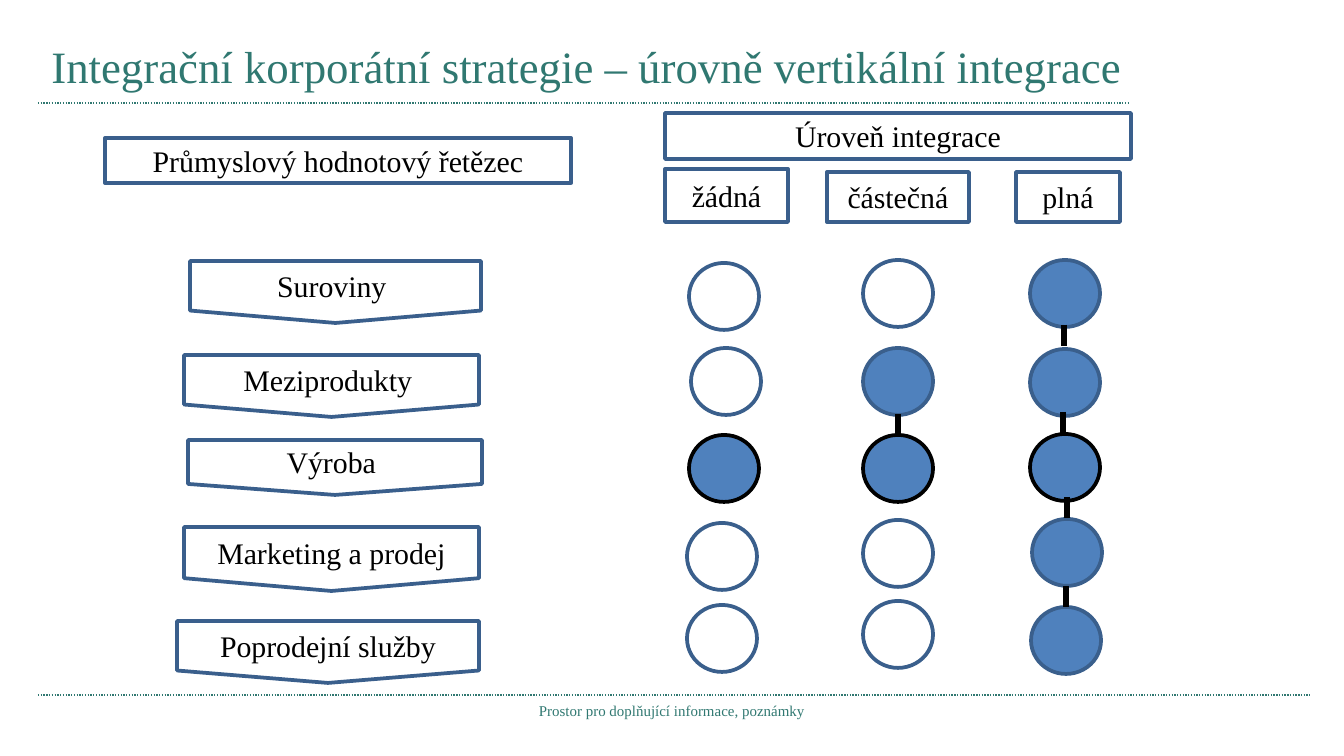
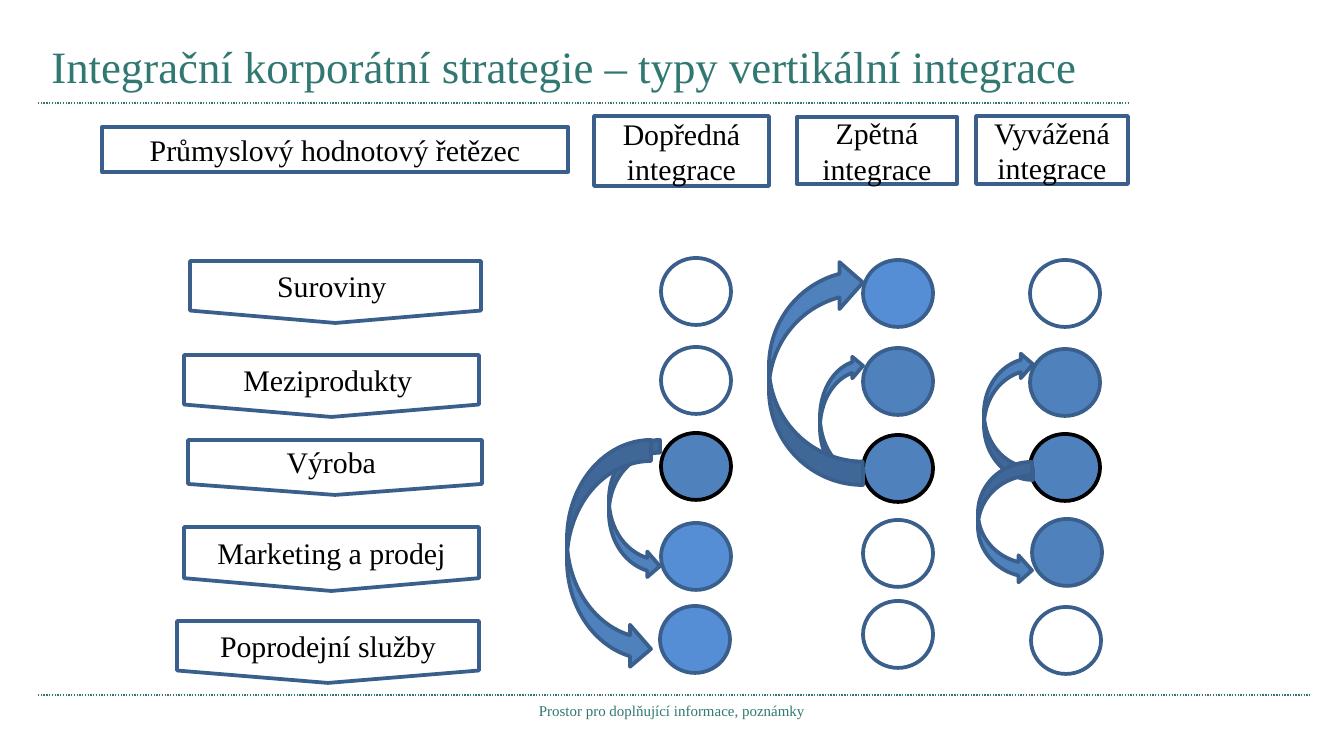
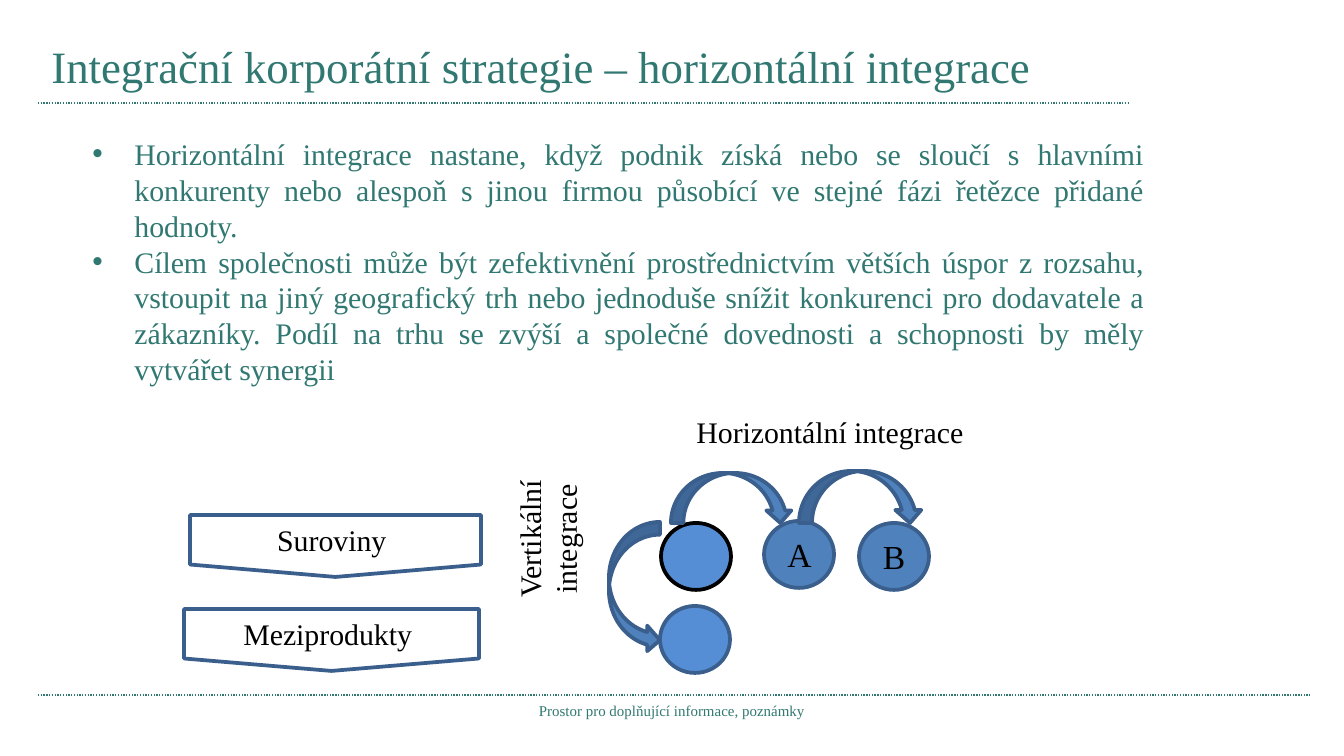
import lxml.etree
import pptx
import pptx.dml.color
import pptx.enum.dml
import pptx.enum.shapes
import pptx.enum.text
import pptx.oxml.ns
import pptx.util

RGBColor = pptx.dml.color.RGBColor
Pt = pptx.util.Pt
SHAPE = pptx.enum.shapes.MSO_SHAPE
ALIGN = pptx.enum.text.PP_ALIGN
ANCHOR = pptx.enum.text.MSO_ANCHOR
FIT = pptx.enum.text.MSO_AUTO_SIZE

TEAL = RGBColor(0x30, 0x78, 0x71)
NAVY = RGBColor(0x3A, 0x5F, 0x8C)
BLUE = RGBColor(0x4F, 0x81, 0xBD)
SKY = RGBColor(0x55, 0x8E, 0xD5)
BLACK = RGBColor(0, 0, 0)
FONT = "Times New Roman"
SCALE = 9144000 / 1344
SLIDE_SIZE = (1344, 756)

TITLE_AREA = (38, 28, 1122, 75)
BODY_AREA = (79, 129, 1079, 267)
FOOTER_AREA = (397, 695, 550, 31)
FOOTER = "Prostor pro doplňující informace, poznámky"
RULES = [(38, 103, 1128, 103), (38, 695, 1310, 695)]

TITLES = [
    "Integrační korporátní strategie – úrovně vertikální integrace",
    "Integrační korporátní strategie – typy vertikální integrace",
    "Integrační korporátní strategie – horizontální integrace",
]
BULLETS = [
    "Horizontální integrace nastane, když podnik získá nebo se sloučí s hlavními konkurenty "
    "nebo alespoň s jinou firmou působící ve stejné fázi řetězce přidané hodnoty. ",
    "Cílem společnosti může být zefektivnění prostřednictvím větších úspor z rozsahu, vstoupit "
    "na jiný geografický trh nebo jednoduše snížit konkurenci pro dodavatele a zákazníky. "
    "Podíl na trhu se zvýší a společné dovednosti a schopnosti by měly vytvářet synergii",
]

STAGES = [
    ("Suroviny ", (190, 261, 291, 62)),
    ("Meziprodukty ", (184, 355, 295, 62)),
    ("Výroba ", (188, 440, 294, 55)),
    ("Marketing a prodej", (184, 527, 295, 64)),
    ("Poprodejní služby", (177, 621, 302, 62)),
]
STAGE_DROP = 254

LEVEL_HEADINGS = [
    ("Průmyslový hodnotový řetězec", (105, 138, 466, 45)),
    ("žádná", (665, 169, 123, 53)),
    ("částečná", (827, 172, 142, 50)),
    ("plná", (1016, 172, 104, 50)),
    ("Úroveň integrace", (665, 113, 466, 46)),
]
TYPE_HEADINGS = [
    ("Průmyslový hodnotový řetězec", (102, 127, 466, 45)),
    ("Dopředná integrace", (594, 116, 175, 70)),
    ("Zpětná integrace", (797, 117, 160, 67)),
    ("Vyvážená integrace", (976, 116, 152, 68)),
]

CIRCLE = (70, 67)
CIRCLE_STYLES = {
    "open": (None, NAVY),
    "joined": (BLUE, NAVY),
    "target": (SKY, NAVY),
    "core": (BLUE, BLACK),
    "start": (SKY, BLACK),
}
NONE_SPOTS = [(689, 263), (691, 348), (689, 435), (687, 523), (687, 605)]
FORWARD_SPOTS = [(661, 258), (661, 347), (661, 433), (661, 523), (660, 606)]
MIDDLE_SPOTS = [(863, 260), (863, 348), (863, 435), (863, 520), (863, 601)]
RIGHT_SPOTS = [(1030, 260), (1030, 349), (1030, 434), (1032, 519), (1031, 607)]

LEVEL_COLUMNS = [
    (NONE_SPOTS, ["open", "open", "core", "open", "open"]),
    (MIDDLE_SPOTS, ["open", "joined", "core", "open", "open"]),
    (RIGHT_SPOTS, ["joined", "joined", "core", "joined", "joined"]),
]
TYPE_COLUMNS = [
    (FORWARD_SPOTS, ["open", "open", "core", "target", "target"]),
    (MIDDLE_SPOTS, ["target", "joined", "core", "open", "open"]),
    (RIGHT_SPOTS, ["open", "joined", "core", "joined", "open"]),
]
LINK_LENGTH = 21
LINK_STARTS = [(898, 414), (1064, 325), (1063, 412), (1067, 497), (1066, 586)]

TYPE_ARROWS = [
    (SHAPE.CURVED_RIGHT_ARROW, (609, 440, 51, 139), 0),
    (SHAPE.CURVED_RIGHT_ARROW, (567, 440, 84, 230), 0),
    (SHAPE.CURVED_LEFT_ARROW, (820, 355, 43, 129), 180),
    (SHAPE.CURVED_DOWN_ARROW, (703, 325, 226, 94), 270),
    (SHAPE.CURVED_LEFT_ARROW, (984, 352, 49, 128), 180),
    (SHAPE.CURVED_RIGHT_ARROW, (978, 462, 54, 122), 0),
]
FIRM_CIRCLES = [
    ((764, 521), "joined", "A"),
    ((660, 606), "target", ""),
    ((661, 523), "start", ""),
    ((859, 523), "joined", "B"),
]
FIRM_ARROWS = [
    (SHAPE.CURVED_RIGHT_ARROW, (609, 522, 51, 131), 0),
    (SHAPE.CURVED_DOWN_ARROW, (671, 473, 122, 50), 0),
    (SHAPE.CURVED_DOWN_ARROW, (799, 471, 124, 52), 0),
]
DIRECTIONS = [
    ("Horizontální integrace", (660, 411, 340, 42), "horz"),
    ("Vertikální integrace", (504, 411, 86, 256), "vert270"),
]


def px(value):
    return round(value * SCALE)


def assign(target, values):
    for name, value in values.items():
        setattr(target, name, value)


def place(box, area):
    assign(box, dict(zip(("left", "top", "width", "height"), map(px, area))))


def write(box, text, size, color=BLACK, align=ALIGN.CENTER, anchor=ANCHOR.MIDDLE):
    frame = box.text_frame
    assign(frame, {"word_wrap": True, "auto_size": FIT.NONE, "vertical_anchor": anchor})
    frame.text = text
    for para in frame.paragraphs:
        para.alignment = align
        assign(para.font, {"name": FONT, "size": Pt(size)})
        para.font.color.rgb = color


def add_label(page, text, area, size, **looks):
    box = page.shapes.add_textbox(*map(px, area))
    write(box, text, size, **looks)
    return box


def add_figure(page, kind, area, fill=None, line=NAVY, text="", size=16):
    figure = page.shapes.add_shape(kind, *map(px, area))
    figure.shadow.inherit = False
    if fill is None:
        figure.fill.background()
    else:
        figure.fill.solid()
        figure.fill.fore_color.rgb = fill
    figure.line.color.rgb = line
    figure.line.width = Pt(2)
    if text:
        write(figure, text, size)
    return figure


def add_line(page, ends, color, width, dash=None):
    line = page.shapes.add_connector(pptx.enum.shapes.MSO_CONNECTOR.STRAIGHT, *map(px, ends))
    line.line.color.rgb = color
    assign(line.line, {"width": Pt(width), "dash_style": dash})
    properties = line.element.find(pptx.oxml.ns.qn("p:spPr"))
    lxml.etree.SubElement(properties, pptx.oxml.ns.qn("a:effectLst"))
    return line


def add_page(deck, title, layout):
    page = deck.slides.add_slide(deck.slide_layouts[layout])
    place(page.shapes.title, TITLE_AREA)
    write(page.shapes.title, title, 24, color=TEAL, align=ALIGN.LEFT)
    add_label(page, FOOTER, FOOTER_AREA, 8, color=TEAL, anchor=ANCHOR.TOP)
    return page


def add_master_rules(deck, page):
    for ends in RULES:
        rule = add_line(page, ends, TEAL, 0.75, pptx.enum.dml.MSO_LINE.ROUND_DOT)
        deck.slide_master.shapes.element.insert(2, rule.element)


def add_headings(page, headings):
    for text, area in headings:
        add_figure(page, SHAPE.RECTANGLE, area, text=text)


def add_stages(page, stages, drop=0):
    for text, (left, top, width, height) in stages:
        area = (left, top + drop, width, height)
        add_figure(page, SHAPE.FLOWCHART_OFFPAGE_CONNECTOR, area, text=text)


def add_circle(page, spot, style, text=""):
    fill, line = CIRCLE_STYLES[style]
    add_figure(page, SHAPE.FLOWCHART_CONNECTOR, spot + CIRCLE, fill, line, text, 18)


def add_columns(page, columns):
    for spots, styles in columns:
        for spot, style in zip(spots, styles):
            add_circle(page, spot, style)


def add_arrows(page, arrows):
    for kind, area, rotation in arrows:
        add_figure(page, kind, area, BLUE).rotation = rotation


def add_bullets(page):
    body = page.placeholders[1]
    place(body, BODY_AREA)
    frame = body.text_frame
    frame.text = "\n".join(BULLETS)
    assign(frame, {"word_wrap": True, "auto_size": FIT.SHAPE_TO_FIT_TEXT,
                   "vertical_anchor": ANCHOR.TOP})
    for para in frame.paragraphs:
        properties = para._p.get_or_add_pPr()
        properties.set("marL", str(px(42)))
        properties.set("indent", str(px(-42)))
        bullet = lxml.etree.SubElement(properties, pptx.oxml.ns.qn("a:buChar"))
        bullet.set("char", "•")
        assign(para, {"alignment": ALIGN.JUSTIFY, "space_before": Pt(0)})
        assign(para.font, {"name": FONT, "size": Pt(16)})
        para.font.color.rgb = TEAL


def build_levels(deck):
    page = add_page(deck, TITLES[0], 5)
    add_master_rules(deck, page)
    add_headings(page, LEVEL_HEADINGS)
    add_stages(page, STAGES)
    add_columns(page, LEVEL_COLUMNS)
    for left, top in LINK_STARTS:
        add_line(page, (left, top, left, top + LINK_LENGTH), BLACK, 3)


def build_types(deck):
    page = add_page(deck, TITLES[1], 5)
    add_headings(page, TYPE_HEADINGS)
    add_stages(page, STAGES)
    add_columns(page, TYPE_COLUMNS)
    add_arrows(page, TYPE_ARROWS)


def build_horizontal(deck):
    page = add_page(deck, TITLES[2], 1)
    add_bullets(page)
    add_stages(page, STAGES[:2], STAGE_DROP)
    for spot, style, text in FIRM_CIRCLES:
        add_circle(page, spot, style, text)
    add_arrows(page, FIRM_ARROWS)
    for text, area, direction in DIRECTIONS:
        label = add_label(page, text, area, 16)
        label.text_frame._txBody.bodyPr.set("vert", direction)


def main():
    deck = pptx.Presentation()
    assign(deck, dict(zip(("slide_width", "slide_height"), map(px, SLIDE_SIZE))))
    build_levels(deck)
    build_types(deck)
    build_horizontal(deck)
    deck.save("out.pptx")


if __name__ == "__main__":
    main()
